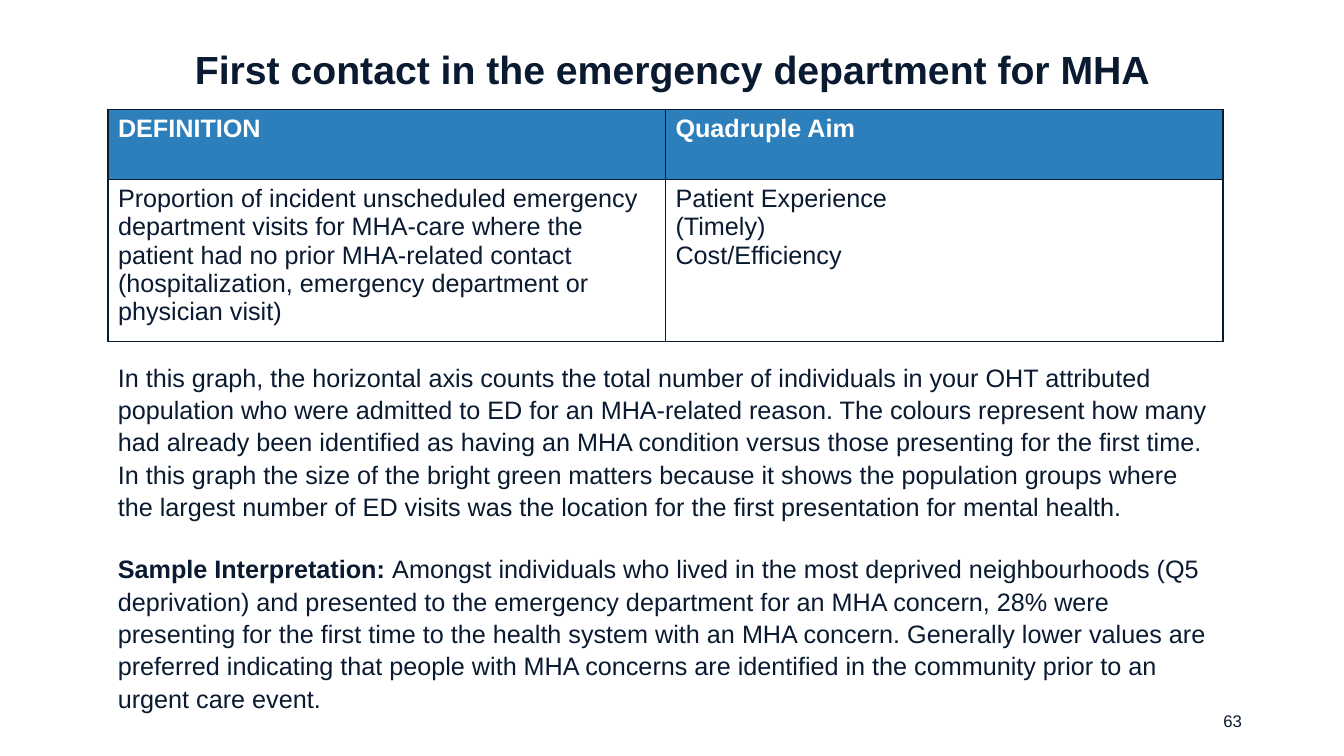
from lxml import etree
from pptx import Presentation
from pptx.dml.color import RGBColor
from pptx.enum.text import MSO_ANCHOR as Anchor, PP_ALIGN as Align
from pptx.oxml.ns import qn
from pptx.util import Cm, Pt

COLORS = {"ink": "0A1A31", "header": "2D7FBC", "white": "FFFFFF"}
FONT = "Arial"

TITLE = "First contact in the emergency department for MHA"
HEADINGS = ["DEFINITION", "Quadruple Aim"]
DEFINITION = (
    "Proportion of incident unscheduled emergency department visits for MHA-care "
    "where the patient had no prior MHA-related contact (hospitalization, "
    "emergency department or physician visit)"
)
AIMS = ["Patient Experience", "(Timely)", "Cost/Efficiency"]
GRAPH_NOTE = (
    "In this graph, the horizontal axis counts the total number of individuals in "
    "your OHT attributed population who were admitted to ED for an MHA-related "
    "reason. The colours represent how many had already been identified as having "
    "an MHA condition versus those presenting for the first time. In this graph the "
    "size of the bright green matters because it shows the population groups where "
    "the largest number of ED visits was the location for the first presentation "
    "for mental health."
)
SAMPLE = (
    "Amongst individuals who lived in the most deprived neighbourhoods (Q5 "
    "deprivation) and presented to the emergency department for an MHA concern, 28% "
    "were presenting for the first time to the health system with an MHA concern. "
    "Generally lower values are preferred indicating that people with MHA concerns "
    "are identified in the community prior to an urgent care event."
)


def rgb(name):
    return RGBColor.from_string(COLORS[name])


def add_run(paragraph, text, size=18, color="ink", bold=False):
    run = paragraph.add_run()
    run.text = text
    run.font.name = FONT
    run.font.size = Pt(size)
    run.font.bold = bold
    run.font.color.rgb = rgb(color)


def add_frame(slide, box, anchor):
    frame = slide.shapes.add_textbox(*(Cm(length) for length in box)).text_frame
    frame.word_wrap = True
    frame.vertical_anchor = anchor
    return frame


def add_line(slide, box, text, size, align, bold=False, spacing=1.0):
    paragraph = add_frame(slide, box, Anchor.MIDDLE).paragraphs[0]
    paragraph.alignment = align
    paragraph.line_spacing = spacing
    add_run(paragraph, text, size, bold=bold)


def add_borders(cell):
    properties = cell._tc.get_or_add_tcPr()
    for side in ("lnL", "lnR", "lnT", "lnB"):
        line = etree.SubElement(properties, qn(f"a:{side}"), w=str(Pt(1)))
        fill = etree.SubElement(line, qn("a:solidFill"))
        etree.SubElement(fill, qn("a:srgbClr"), val=COLORS["ink"])


def fill_cell(cell, lines, background, color, bold):
    add_borders(cell)
    cell.fill.solid()
    cell.fill.fore_color.rgb = rgb(background)
    frame = cell.text_frame
    for index, line in enumerate(lines):
        paragraph = frame.add_paragraph() if index else frame.paragraphs[0]
        add_run(paragraph, line, color=color, bold=bold)


def add_definition_table(slide, box):
    left, top, width, height = box
    table = slide.shapes.add_table(2, 2, Cm(left), Cm(top), Cm(width), Cm(height)).table
    header_height = 1.78
    table.rows[0].height = Cm(header_height)
    table.rows[1].height = Cm(height - header_height)
    for column, heading in enumerate(HEADINGS):
        fill_cell(table.cell(0, column), [heading], "header", "white", True)
    for column, lines in enumerate([[DEFINITION], AIMS]):
        fill_cell(table.cell(1, column), lines, "white", "ink", False)


def add_explanation(slide, box):
    frame = add_frame(slide, box, Anchor.TOP)
    graph_note = frame.paragraphs[0]
    add_run(graph_note, GRAPH_NOTE)
    interpretation = frame.add_paragraph()
    interpretation.space_before = Pt(21.6)
    add_run(interpretation, "Sample Interpretation: ", bold=True)
    add_run(interpretation, SAMPLE)
    for paragraph in (graph_note, interpretation):
        paragraph.line_spacing = 1.07


def main():
    deck = Presentation()
    deck.slide_width, deck.slide_height = Cm(33.87), Cm(19.05)
    slide = deck.slides.add_slide(deck.slide_layouts[6])
    left, width = 2.72, 28.1
    add_line(slide, (23.93, 17.65, 7.62, 1.02), "63", 12, Align.RIGHT)
    add_line(slide, (1.96, 0.74, 29.97, 2.13), TITLE, 28, Align.CENTER, True, 0.9)
    add_definition_table(slide, (left, 2.75, width, 5.85))
    add_explanation(slide, (left, 8.94, width, 8.71))
    deck.save("out.pptx")


if __name__ == "__main__":
    main()
